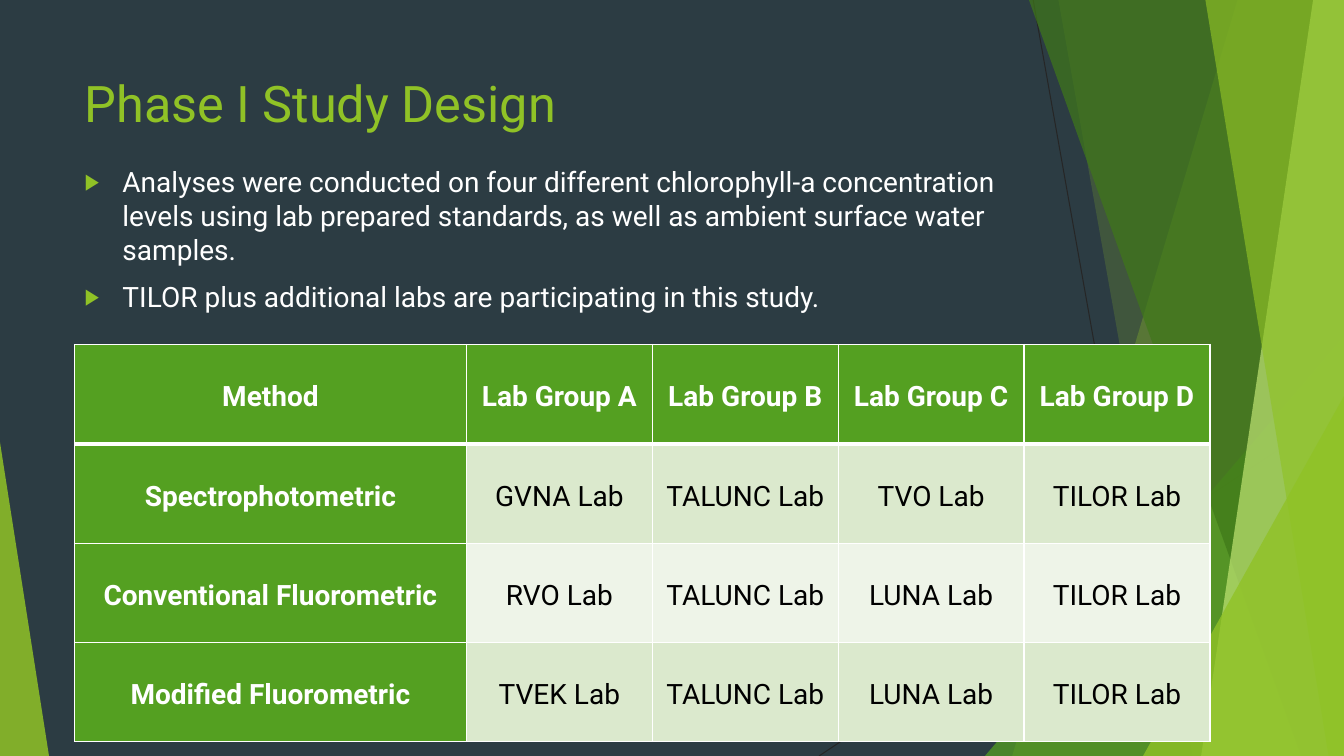
from lxml import etree
from pptx import Presentation
from pptx.dml.color import RGBColor
from pptx.enum.shapes import MSO_CONNECTOR, MSO_SHAPE
from pptx.enum.text import MSO_ANCHOR, MSO_AUTO_SIZE, PP_ALIGN
from pptx.oxml.ns import qn
from pptx.util import Pt

STRAIGHT = MSO_CONNECTOR.STRAIGHT
TRIANGLE = MSO_SHAPE.ISOSCELES_TRIANGLE
TOP, MIDDLE = MSO_ANCHOR.TOP, MSO_ANCHOR.MIDDLE
LEFT, CENTER = PP_ALIGN.LEFT, PP_ALIGN.CENTER
NO_AUTOFIT = MSO_AUTO_SIZE.NONE

WIDTH, HEIGHT = 960, 540
FONT = "Roboto"
LIME, GREEN, WHITE, BLACK = "90C226", "54A021", "FFFFFF", "000000"
BANDS = ["DBE9CD", "EEF4E8"]

POINTS = [
    "Analyses were conducted on four different chlorophyll-a concentration "
    "levels using lab prepared standards, as well as ambient surface water samples.",
    "TILOR plus additional labs are participating in this study.",
]
LABS = [
    ["Method", "Lab Group A", "Lab Group B", "Lab Group C", "Lab Group D"],
    ["Spectrophotometric", "GVNA Lab", "TALUNC Lab", "TVO Lab", "TILOR Lab"],
    ["Conventional Fluorometric", "RVO Lab", "TALUNC Lab", "LUNA Lab", "TILOR Lab"],
    ["Modified Fluorometric", "TVEK Lab", "TALUNC Lab", "LUNA Lab", "TILOR Lab"],
]


def rgb(color):
    return RGBColor.from_string(color)


def child(parent, tag, **attributes):
    return etree.SubElement(parent, qn(tag), attributes)


def style_font(paragraph, size, color, bold=False):
    font = paragraph.font
    font.name, font.size, font.bold = FONT, Pt(size), bold
    font.color.rgb = rgb(color)


def fill_translucent(facet, color, opacity):
    facet.shadow.inherit = False
    facet.line.fill.background()
    facet.fill.solid()
    facet.fill.fore_color.rgb = rgb(color)
    tint = facet.fill._xPr.find(qn("a:solidFill"))[0]
    child(tint, "a:alpha", val=str(opacity * 1000))


def add_slab(slide, top_x, bottom_x, color, opacity):
    """Full-height facet from a slanted left edge to the slide's right edge."""
    outline = slide.shapes.build_freeform(Pt(top_x), 0)
    outline.add_line_segments(
        [(Pt(WIDTH), 0), (Pt(WIDTH), Pt(HEIGHT)), (Pt(bottom_x), Pt(HEIGHT))])
    fill_translucent(outline.convert_to_shape(), color, opacity)


def add_corner(slide, left, top, width, apex, color, opacity):
    """Triangle standing on the slide's bottom edge; apex is 0 (left) to 1 (right)."""
    corner = slide.shapes.add_shape(
        TRIANGLE, Pt(left), Pt(top), Pt(width), Pt(HEIGHT - top))
    corner.adjustments[0] = apex
    fill_translucent(corner, color, opacity)


def add_hairline(slide, *ends):
    hairline = slide.shapes.add_connector(STRAIGHT, *map(Pt, ends))
    hairline.line.color.rgb = rgb("262626")
    hairline.line.width = Pt(0.75)
    child(hairline._element.spPr, "a:effectLst")


def add_backdrop(slide):
    add_hairline(slide, 738, 0, 834, HEIGHT)
    add_hairline(slide, WIDTH, 290, 585, HEIGHT)
    add_slab(slide, 884, 723, LIME, 30)
    add_slab(slide, 756, 852, LIME, 20)
    add_corner(slide, 703.5, 240, 256.5, 1, GREEN, 72)
    add_slab(slide, 735, 929.5, "3F7819", 70)
    add_slab(slide, 938, 858, "C0E474", 70)
    add_slab(slide, 861, 949, LIME, 65)
    add_corner(slide, 816.5, 283, 143.5, 1, LIME, 80)
    add_corner(slide, 0, 316, 35, 0, LIME, 85)


def place(slide, holder, top, height):
    """Position a placeholder and bring it in front of the backdrop."""
    slide.shapes._spTree.append(holder._element)
    holder.left, holder.top = Pt(53.25), Pt(top)
    holder.width, holder.height = Pt(677), Pt(height)
    frame = holder.text_frame
    frame.auto_size, frame.vertical_anchor = NO_AUTOFIT, TOP
    return frame


def add_bullet(paragraph):
    properties = paragraph._p.get_or_add_pPr()
    properties.set("marL", str(Pt(27)))
    properties.set("indent", str(Pt(-27)))
    child(child(properties, "a:buClr"), "a:srgbClr", val=LIME)
    child(properties, "a:buSzPct", val="80000")
    child(properties, "a:buFont", typeface="Arial")
    child(properties, "a:buChar", char="▶")


def fill_title(slide, wording):
    title = place(slide, slide.shapes.title, 48, 66).paragraphs[0]
    title.text, title.alignment = wording, LEFT
    style_font(title, 36, LIME)


def fill_body(slide, points):
    frame = place(slide, slide.placeholders[1], 114.25, 398)
    frame.text = "\n".join(points)
    for point in frame.paragraphs:
        add_bullet(point)
        point.space_before = Pt(10)
        style_font(point, 20, WHITE)


def set_borders(cell, top, bottom):
    properties = cell._tc.get_or_add_tcPr()
    for side, width in zip("LRTB", (1, 1, top, bottom)):
        edge = child(properties, f"a:ln{side}", w=str(Pt(width)))
        child(child(edge, "a:solidFill"), "a:srgbClr", val=WHITE)


def format_cell(cell, row, column):
    heading = row == 0 or column == 0
    set_borders(cell, 3 if row == 1 else 1, 3 if row == 0 else 1)
    cell.fill.solid()
    cell.fill.fore_color.rgb = rgb(GREEN if heading else BANDS[(row - 1) % 2])
    cell.vertical_anchor = MIDDLE
    cell.margin_left = cell.margin_right = Pt(5.5)
    cell.margin_top, cell.margin_bottom = Pt(4.5), Pt(3.5)
    entry = cell.text_frame.paragraphs[0]
    entry.alignment, entry.line_spacing = CENTER, 1.15
    style_font(entry, 20, WHITE if heading else BLACK, heading)


def add_lab_table(slide, labs):
    table = slide.shapes.add_table(
        len(labs), len(labs[0]), Pt(53.25), Pt(246), Pt(811), Pt(284)).table
    table.first_row = table.horz_banding = False
    for index, column in enumerate(table.columns):
        column.width = Pt(132.75 if index else 280)
    for row, names in enumerate(labs):
        table.rows[row].height = Pt(71)
        for column, name in enumerate(names):
            cell = table.cell(row, column)
            cell.text = name
            format_cell(cell, row, column)


def main():
    deck = Presentation()
    deck.slide_width, deck.slide_height = Pt(WIDTH), Pt(HEIGHT)
    slide = deck.slides.add_slide(deck.slide_layouts[1])
    slide.background.fill.solid()
    slide.background.fill.fore_color.rgb = rgb("2C3C43")
    add_backdrop(slide)
    fill_title(slide, "Phase I Study Design")
    fill_body(slide, POINTS)
    add_lab_table(slide, LABS)
    deck.save("out.pptx")


if __name__ == "__main__":
    main()
